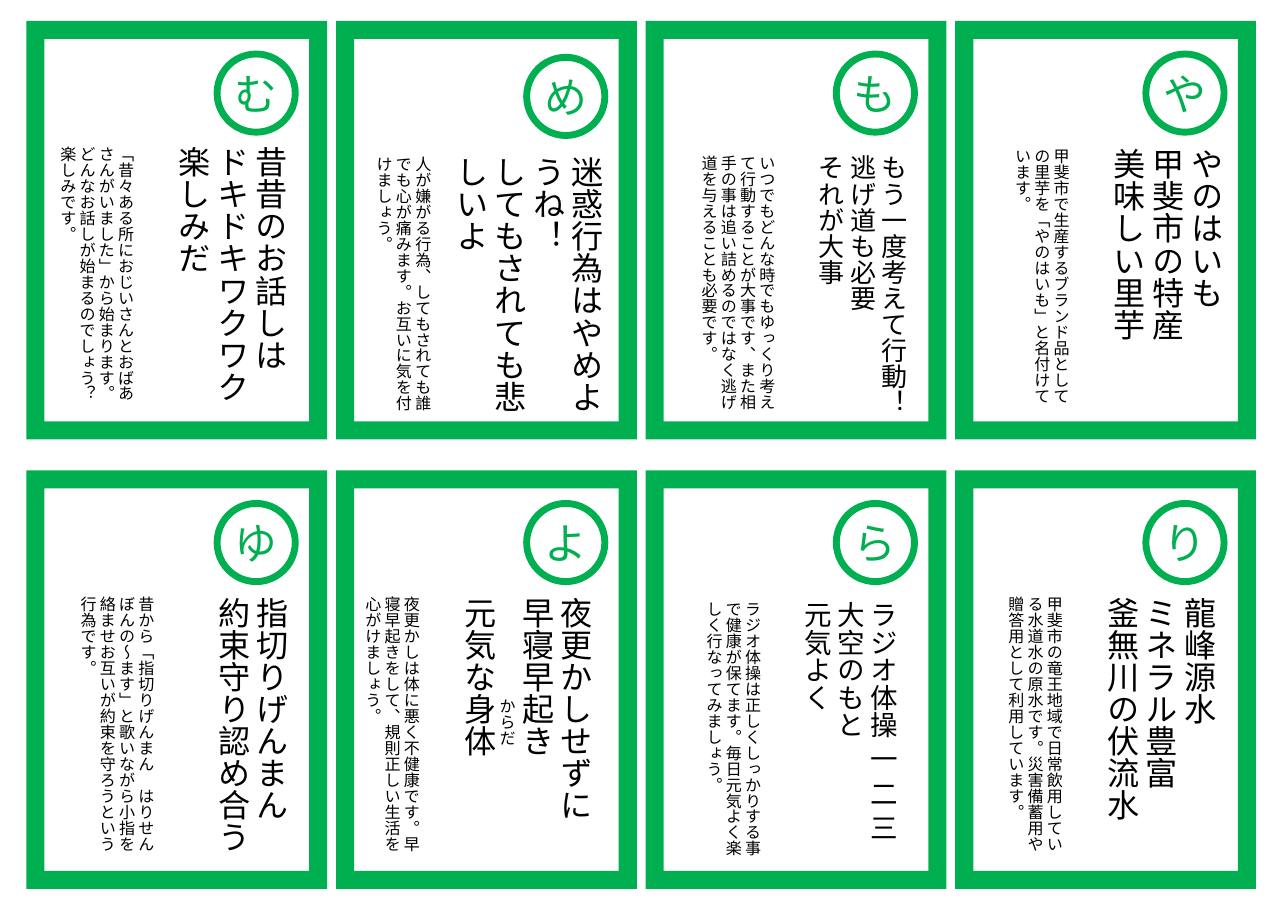
import dataclasses
import typing

import pptx
import pptx.dml.color
import pptx.enum.shapes
import pptx.enum.text
import pptx.oxml
import pptx.oxml.ns
import pptx.util

Inches = pptx.util.Inches
Shape = pptx.enum.shapes.MSO_SHAPE
Align = pptx.enum.text.PP_ALIGN
Anchor = pptx.enum.text.MSO_ANCHOR
Fit = pptx.enum.text.MSO_AUTO_SIZE


@dataclasses.dataclass(frozen=True)
class Theme:
    green: str = "00B050"
    white: str = "FFFFFF"
    black: str = "000000"
    font: str = "Noto Sans CJK JP"
    kana: float = 28
    verse: float = 21
    note: float = 10.5
    line: float = 4.5
    blank: float = 12.7


class Box(typing.NamedTuple):
    left: float
    top: float
    width: float
    height: float = 2.56


class Card(typing.NamedTuple):
    kana: str
    box: Box
    verse: tuple[str, ...]
    note: str
    gap: int = 2
    size: float = Theme.verse
    drop: float = 0.3
    split: int = 0


THEME = Theme()
COLS = 4
LEFT, TOP = 0.24, 0.19
STEP_X, STEP_Y = 2.81, 4.08
CARDS = (
    Card("む", Box(0.36, 1.23, 2.32),
         ("昔昔のお話しは", "ドキドキワクワク楽しみだ"),
         "「昔々ある所におじいさんとおばあさんがいました」から始まります。"
         "どんなお話しが始まるのでしょう？楽しみです。"),
    Card("め", Box(3.05, 1.32, 2.5),
         ("迷惑行為はやめようね！", "してもされても悲しいよ"),
         "人が嫌がる行為、してもされても誰でも心が痛みます。"
         "お互いに気を付けましょう。", gap=1, drop=0.33),
    Card("も", Box(6.18, 1.31, 2.12),
         ("もう一度考えて行動！", "逃げ道も必要", "それが大事"),
         "いつでもどんな時でもゆっくり考えて行動することが大事です、"
         "また相手の事は追い詰めるのではなく逃げ道を与えることも必要です。",
         size=17),
    Card("や", Box(9.02, 1.25, 2.15),
         ("やのはいも", "甲斐市の特産", "美味しい里芋"),
         "甲斐市で生産するブランド品としての里芋を「やのはいも」と名付けています。"),
    Card("ゆ", Box(0.54, 5.32, 2.15),
         ("指切りげんまん", "約束守り認め合う"),
         "昔から「指切りげんまん　はりせんぼんの～ます」と歌いながら"
         "小指を絡ませお互いが約束を守ろうという行為です。", gap=3),
    Card("よ", Box(2.95, 5.32, 2.5),
         ("夜更かしせずに", "早寝早起き", "元気な身体"),
         "夜更かしは体に悪く不健康です。早寝早起きをして、"
         "規則正しい生活を心がけましょう。", split=2),
    Card("ら", Box(6.23, 5.36, 1.99),
         ("ラジオ体操 一 二 三 大空のもと", "元気よく"),
         "ラジオ体操は正しくしっかりする事で健康が保てます。"
         "毎日元気よく楽しく行なってみましょう。", size=18),
    Card("り", Box(8.96, 5.32, 2.15),
         ("龍峰源水", "ミネラル豊富", "釜無川の伏流水"),
         "甲斐市の竜王地域で日常飲用している水道水の原水です。"
         "災害備蓄用や贈答用として利用しています。"),
)


def tint(code: str) -> pptx.dml.color.RGBColor:
    """Return the colour for a hex code."""
    return pptx.dml.color.RGBColor.from_string(code)


def place(box: Box) -> list[int]:
    """Return the box as slide lengths."""
    return [Inches(side) for side in box]


def write(para: typing.Any, text: str, size: float, code: str) -> None:
    """Fill a paragraph and set its font."""
    para.text = text
    font = para.font
    font.size = pptx.util.Pt(size)
    font.color.rgb = tint(code)
    font.name = THEME.font
    props = para._p.pPr.find(pptx.oxml.ns.qn("a:defRPr"))
    east = pptx.oxml.parse_xml(f'<a:ea {pptx.oxml.ns.nsdecls("a")}/>')
    east.set("typeface", THEME.font)
    props.append(east)


def add_frame(slide: typing.Any, left: float, top: float) -> None:
    """Draw the green border of a card."""
    frame = slide.shapes.add_shape(Shape.FRAME, *place(Box(left, top, 2.73, 3.8)))
    frame.adjustments[0] = 0.06
    frame.shadow.inherit = False
    frame.fill.solid()
    frame.fill.fore_color.rgb = tint(THEME.green)
    frame.line.fill.background()


def add_badge(slide: typing.Any, left: float, top: float, kana: str) -> None:
    """Draw the ring that holds the first kana."""
    badge = slide.shapes.add_shape(Shape.OVAL, *place(Box(left, top, 0.71, 0.71)))
    badge.shadow.inherit = False
    badge.fill.solid()
    badge.fill.fore_color.rgb = tint(THEME.white)
    badge.line.color.rgb = tint(THEME.green)
    badge.line.width = pptx.util.Pt(THEME.line)
    text = badge.text_frame
    text.margin_left = text.margin_right = text.margin_top = text.margin_bottom = 0
    text.vertical_anchor = Anchor.MIDDLE
    text.paragraphs[0].alignment = Align.CENTER
    write(text.paragraphs[0], kana, THEME.kana, THEME.green)


def add_text(slide: typing.Any, box: Box) -> typing.Any:
    """Add an upright text box and return its frame."""
    text = slide.shapes.add_textbox(*place(box)).text_frame
    text.word_wrap = True
    text.auto_size = Fit.SHAPE_TO_FIT_TEXT
    text._txBody.bodyPr.set("vert", "eaVert")
    return text


def add_verse(slide: typing.Any, card: Card) -> None:
    """Write the verse of a card and its note."""
    text = add_text(slide, card.box)
    for row, verse in enumerate(card.verse):
        para = text.add_paragraph() if row else text.paragraphs[0]
        write(para, verse, card.size, THEME.black)
        if row and row == card.split:
            para.space_before = pptx.util.Pt(THEME.blank)
    para = text.add_paragraph()
    write(para, card.note, THEME.note, THEME.black)
    para.space_before = pptx.util.Pt(THEME.blank * card.gap)


def main() -> None:
    """Build the sheet of eight cards."""
    deck = pptx.Presentation()
    deck.slide_width, deck.slide_height = Inches(11.69), Inches(8.27)
    slide = deck.slides.add_slide(deck.slide_layouts[6])
    for spot, card in enumerate(CARDS):
        row, col = divmod(spot, COLS)
        left, top = LEFT + col * STEP_X, TOP + row * STEP_Y
        add_frame(slide, left, top)
        add_badge(slide, left + 1.73, top + card.drop, card.kana)
    for card in CARDS:
        add_verse(slide, card)
    ruby = add_text(slide, Box(4.36, 6.24, 0.38, 0.65))
    write(ruby.paragraphs[0], "からだ", THEME.note, THEME.black)
    deck.save("out.pptx")


if __name__ == "__main__":
    main()
